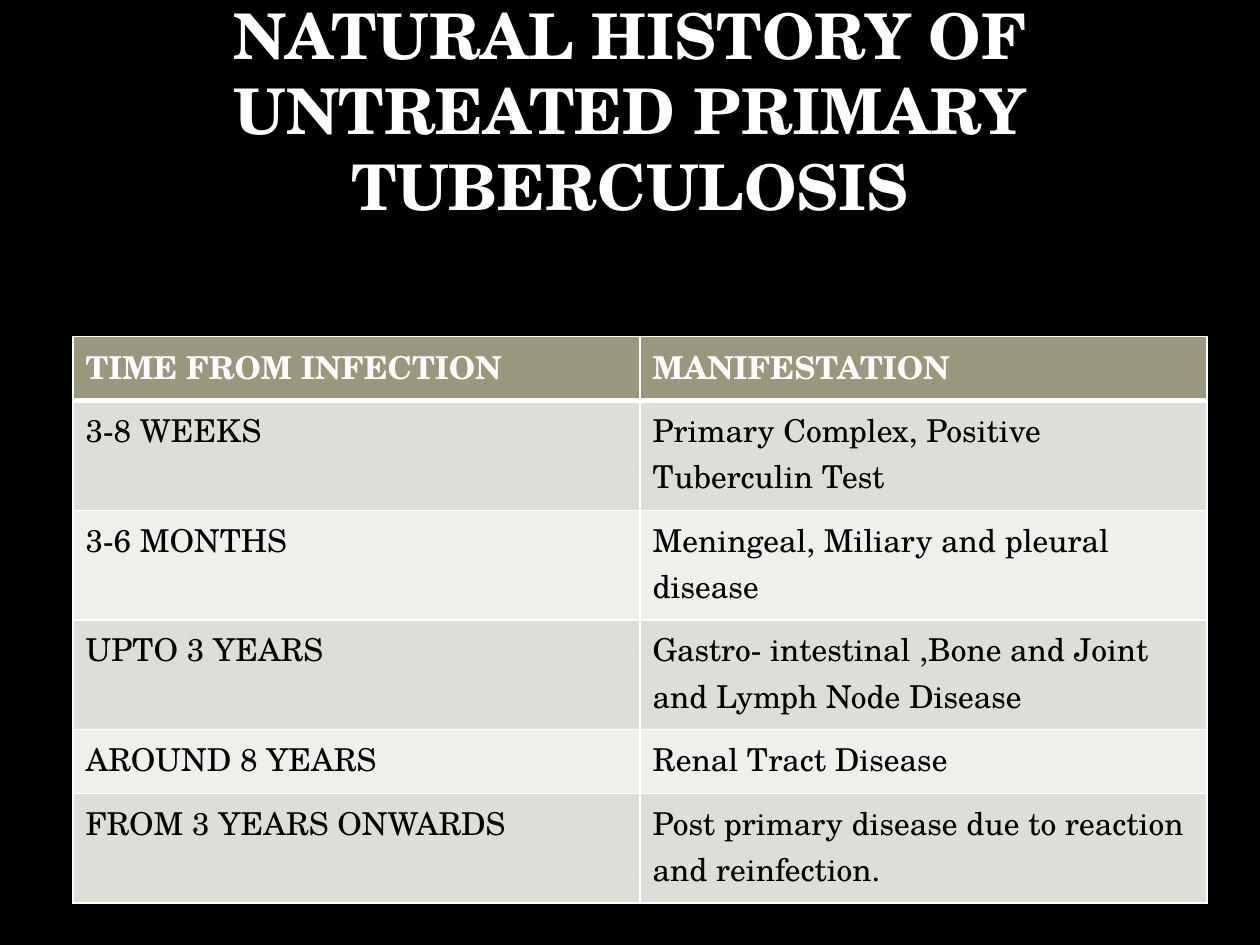
from lxml.etree import SubElement
from pptx import Presentation
from pptx.dml.color import RGBColor
from pptx.enum.text import MSO_ANCHOR, PP_ALIGN
from pptx.oxml.ns import qn
from pptx.util import Inches, Pt

# Content
TITLE = "NATURAL HISTORY OF UNTREATED PRIMARY TUBERCULOSIS"
ROWS = [
    ("TIME FROM INFECTION", "MANIFESTATION"),
    ("3-8 WEEKS", "Primary Complex, Positive Tuberculin Test"),
    ("3-6 MONTHS", "Meningeal, Miliary and pleural disease"),
    ("UPTO 3 YEARS", "Gastro- intestinal ,Bone and Joint and Lymph Node Disease"),
    ("AROUND 8 YEARS", "Renal Tract Disease"),
    ("FROM 3 YEARS ONWARDS", "Post primary disease due to reaction and reinfection."),
]

# Format
BLACK = RGBColor(0, 0, 0)
WHITE = RGBColor(255, 255, 255)
OLIVE = RGBColor(0x99, 0x98, 0x7F)
BANDS = (RGBColor(0xEF, 0xEF, 0xEC), RGBColor(0xDE, 0xDD, 0xD8))
FONT = "TeX Gyre Schola"
TITLE_FORMAT = {"name": FONT, "size": Pt(36), "bold": True}
HEADER_FORMAT = {"name": FONT, "size": Pt(18), "bold": True}
BODY_FORMAT = {**HEADER_FORMAT, "bold": False}

# Layout
WIDTH, HEIGHT = Inches(10), Inches(7.5)
TABLE_LEFT, TABLE_TOP, TABLE_WIDTH = Inches(0.58), Inches(2.67), Inches(9)
ONE_LINE, TWO_LINES = Inches(0.51), Inches(0.87)
LINE_LIMIT = 25  # characters that fit on one line of a cell


def write(frame, text, color, values):
    para = frame.paragraphs[0]
    span = para.add_run()
    span.text = text
    span.font.color.rgb = color
    for name, value in values.items():
        setattr(span.font, name, value)
    return para


def add_borders(cell, widths):
    properties = cell._tc.get_or_add_tcPr()
    for index, (side, width) in enumerate(widths.items()):
        line = SubElement(properties, qn(f"a:ln{side}"), w=str(Pt(width)))
        fill = SubElement(line, qn("a:solidFill"))
        SubElement(fill, qn("a:srgbClr"), val=str(WHITE))
        properties.insert(index, line)


deck = Presentation()
deck.slide_width, deck.slide_height = WIDTH, HEIGHT
page = deck.slides.add_slide(deck.slide_layouts[6])
page.background.fill.solid()
page.background.fill.fore_color.rgb = BLACK

# Table
heights = [TWO_LINES if len(row[1]) > LINE_LIMIT else ONE_LINE for row in ROWS]
table = page.shapes.add_table(
    len(ROWS), len(ROWS[0]), TABLE_LEFT, TABLE_TOP, TABLE_WIDTH, sum(heights)
).table
for number, (texts, height) in enumerate(zip(ROWS, heights)):
    header = number == 0
    table.rows[number].height = height
    for cell, text in zip(table.rows[number].cells, texts):
        cell.fill.solid()
        cell.fill.fore_color.rgb = OLIVE if header else BANDS[number % 2]
        write(cell.text_frame, text, WHITE if header else BLACK,
              HEADER_FORMAT if header else BODY_FORMAT)
        add_borders(cell, {"L": 1, "R": 1, "T": 3 if number == 1 else 1,
                           "B": 3 if header else 1})

# Title
box = page.shapes.add_textbox(0, 0, WIDTH, Inches(1.82))
box.text_frame.word_wrap = True
box.text_frame.vertical_anchor = MSO_ANCHOR.BOTTOM
para = write(box.text_frame, TITLE, WHITE, TITLE_FORMAT)
para.alignment = PP_ALIGN.CENTER
para.space_before = Pt(4)

deck.save("out.pptx")
